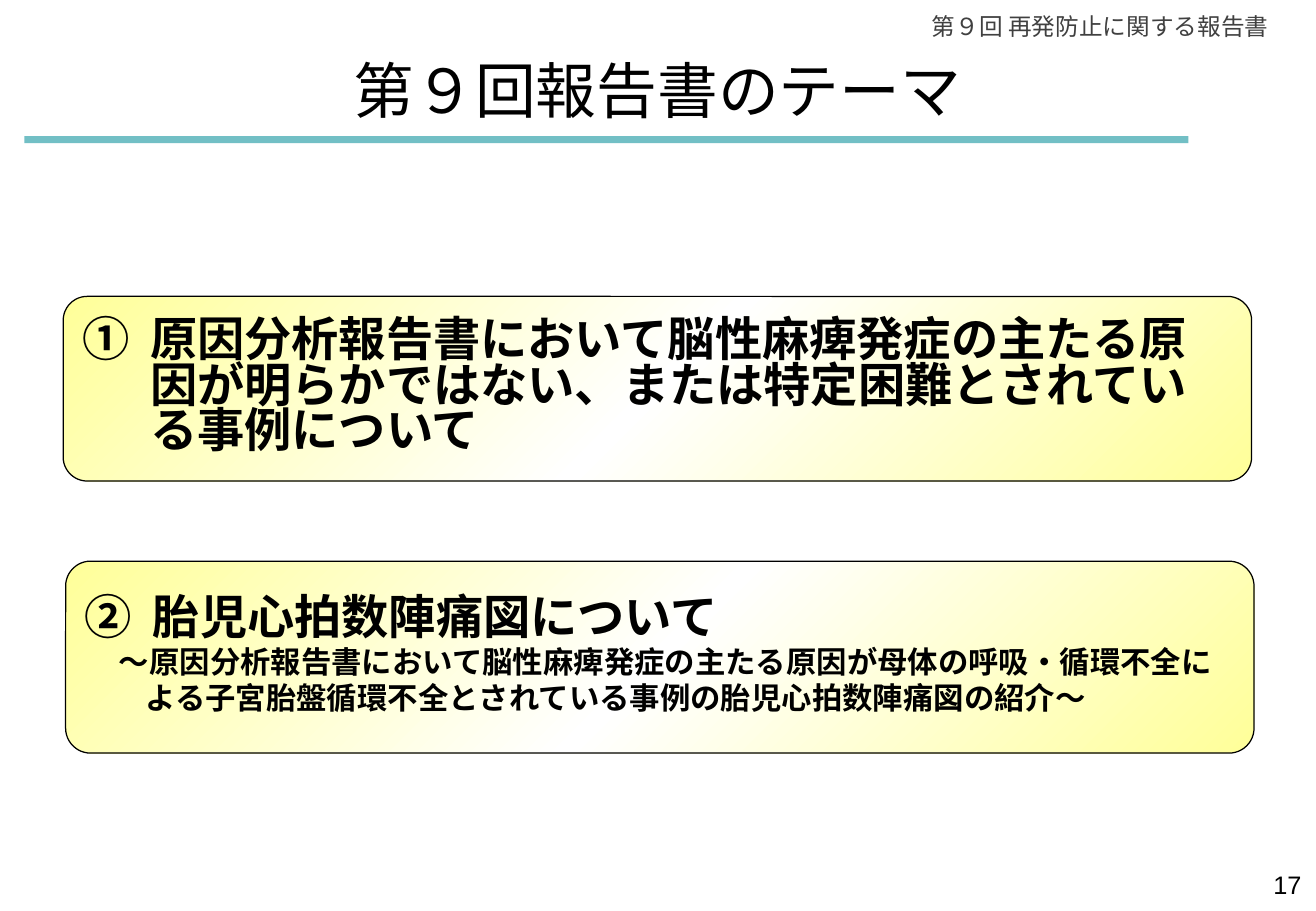
"""Build the slide that lists the themes of the ninth report."""
from dataclasses import dataclass

from lxml.etree import SubElement
from pptx import Presentation
from pptx.dml.color import RGBColor
from pptx.enum.shapes import MSO_SHAPE
from pptx.enum.text import MSO_ANCHOR, PP_ALIGN
from pptx.oxml import parse_xml
from pptx.oxml.ns import nsdecls, qn
from pptx.shapes.autoshape import Shape
from pptx.slide import Slide
from pptx.text.text import TextFrame
from pptx.util import Inches, Pt

JAPANESE_FONT = "Noto Sans CJK JP"
GRADIENT = ((0, "FFFF99"), (50, "FFFFFF"), (100, "FFFF99"))


@dataclass(frozen=True)
class Line:
    text: str
    size: float
    font: str = JAPANESE_FONT
    color: str = "000000"
    bold: bool = False
    align: PP_ALIGN = PP_ALIGN.LEFT
    margin: float = 0
    hanging: float = 0
    number: int = 0
    spacing: float = 1.0
    before: float = 0


@dataclass(frozen=True)
class Box:
    left: float
    top: float
    width: float
    height: float
    lines: tuple[Line, ...]


def rgb(color: str) -> RGBColor:
    return RGBColor.from_string(color)


def write(tf: TextFrame, lines: tuple[Line, ...]) -> None:
    for i, line in enumerate(lines):
        p = tf.add_paragraph() if i else tf.paragraphs[0]
        pPr = p._p.get_or_add_pPr()
        pPr.set("marL", str(Inches(line.margin)))
        pPr.set("indent", str(Inches(-line.hanging)))
        if line.number:
            SubElement(pPr, qn("a:buAutoNum"), type="circleNumDbPlain",
                       startAt=str(line.number))
        layout = {"alignment": line.align, "line_spacing": line.spacing,
                  "space_before": Pt(line.before)}
        for name, value in layout.items():
            setattr(p, name, value)
        r = p.add_run()
        r.text = line.text
        style = {"size": Pt(line.size), "bold": line.bold, "name": line.font}
        for name, value in style.items():
            setattr(r.font, name, value)
        r.font.color.rgb = rgb(line.color)
        SubElement(r._r.get_or_add_rPr(), qn("a:ea"), typeface=JAPANESE_FONT)


def place(sp: Shape, box: Box) -> None:
    for name in ("left", "top", "width", "height"):
        setattr(sp, name, Inches(getattr(box, name)))


def add_text(s: Slide, box: Box) -> None:
    sp = s.shapes.add_textbox(0, 0, 0, 0)
    place(sp, box)
    sp.text_frame.word_wrap = True
    write(sp.text_frame, box.lines)


def add_shape(s: Slide, kind: MSO_SHAPE, box: Box) -> Shape:
    sp = s.shapes.add_shape(kind, 0, 0, 0, 0)
    place(sp, box)
    sp.shadow.inherit = False
    return sp


def add_theme(s: Slide, box: Box) -> None:
    sp = add_shape(s, MSO_SHAPE.ROUNDED_RECTANGLE, box)
    sp.adjustments[0] = 0.13
    stops = "".join(f'<a:gs pos="{pos * 1000}"><a:srgbClr val="{color}"/></a:gs>'
                    for pos, color in GRADIENT)
    sp._element.spPr.find(qn("a:prstGeom")).addnext(parse_xml(
        f'<a:gradFill {nsdecls("a")} rotWithShape="1"><a:gsLst>{stops}</a:gsLst>'
        '<a:lin ang="2700000" scaled="0"/></a:gradFill>'))
    sp.line.color.rgb = rgb("000000")
    sp.line.width = Pt(0.75)
    tf = sp.text_frame
    tf.word_wrap = True
    tf.vertical_anchor = MSO_ANCHOR.MIDDLE
    write(tf, box.lines)


def heading(number: int, text: str) -> Line:
    return Line(text, 28, "Arial", bold=True, margin=0.56, hanging=0.56,
                number=number, spacing=0.8)


def subtitle(text: str, margin: float) -> Line:
    return Line(text, 18, "Arial", bold=True, margin=margin, spacing=0.8, before=4)


HEADER = Box(7.38, 0.05, 3.16, 0.34, (
    Line("第９回 再発防止に関する報告書", 14, "Arial", "404040", align=PP_ALIGN.RIGHT),))
TITLE = Box(2.78, 0.38, 5.26, 0.71, (
    Line("第９回報告書のテーマ", 36, align=PP_ALIGN.CENTER),))
RULE = Box(0.2, 1.12, 9.58, 0.06, ())
PAGE_NUMBER = Box(8.28, 7.11, 2.53, 0.39, (
    Line("17", 15, "Arial", align=PP_ALIGN.RIGHT),))
THEMES = (
    Box(0.52, 2.44, 9.78, 1.52, (
        heading(1, "原因分析報告書において脳性麻痺発症の主たる原因が明らかではない、"
                   "または特定困難とされている事例について"),)),
    Box(0.54, 4.62, 9.78, 1.58, (
        heading(2, "胎児心拍数陣痛図について"),
        subtitle("～原因分析報告書において脳性麻痺発症の主たる原因が母体の呼吸・循環不全に", 0.28),
        subtitle("よる子宮胎盤循環不全とされている事例の胎児心拍数陣痛図の紹介～", 0.5))),
)


def main() -> None:
    prs = Presentation()
    prs.slide_width, prs.slide_height = Inches(10.83), Inches(7.5)
    s = prs.slides.add_slide(prs.slide_layouts[5])
    rule = add_shape(s, MSO_SHAPE.RECTANGLE, RULE)
    rule.fill.solid()
    rule.fill.fore_color.rgb = rgb("72BFC5")
    rule.line.fill.background()
    add_text(s, HEADER)
    title = s.shapes.title
    place(title, TITLE)
    title.text_frame.word_wrap = False
    title.text_frame.vertical_anchor = MSO_ANCHOR.MIDDLE
    write(title.text_frame, TITLE.lines)
    for theme in THEMES:
        add_theme(s, theme)
    add_text(s, PAGE_NUMBER)
    prs.save("out.pptx")


if __name__ == "__main__":
    main()
